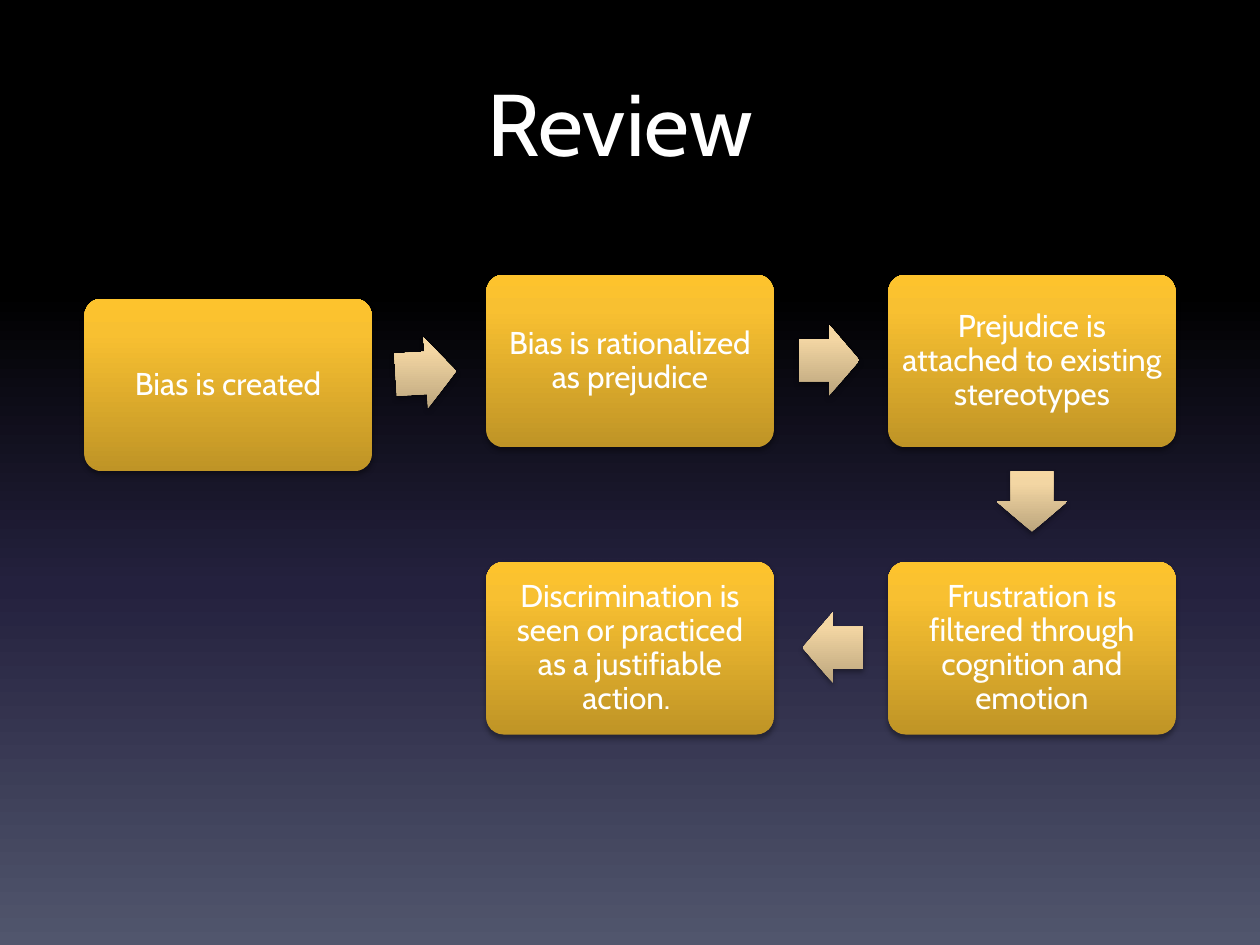
"""Build the Review slide: five bias steps joined by block arrows."""
import pptx
import pptx.dml.color
import pptx.enum.shapes
import pptx.enum.text
import pptx.oxml
import pptx.oxml.ns
import pptx.util

Inches = pptx.util.Inches
Pt = pptx.util.Pt
qn = pptx.oxml.ns.qn
SHAPES = pptx.enum.shapes.MSO_SHAPE

FONT = "Cabin"
COLORS = {
    "text": "FFFFFF",
    "shadow": "000000",
    "night": "000000",
    "indigo": "24213E",
    "slate": "51566D",
    "gold_dark": "BF9426",
    "gold": "F8C031",
    "gold_light": "FDC32D",
    "sand_dark": "BBA57D",
    "sand": "F3D6A3",
    "sand_light": "F6D7A2",
}
BACKGROUND_STOPS = [(0, "night"), (31, "night"), (62, "indigo"), (100, "slate")]
BOX_STOPS = [(0, "gold_dark"), (80, "gold"), (100, "gold_light")]
ARROW_STOPS = [(0, "sand_dark"), (80, "sand"), (100, "sand_light")]

BOX_WIDTH, BOX_HEIGHT = 2.28, 1.37
COLUMNS = [0.67 + 3.19 * column for column in range(3)]
UPPER_ROW, LOWER_ROW = 2.18, 4.46
STEPS = [
    ("Bias is created", COLUMNS[0], 2.37),
    ("Bias is rationalized as prejudice", COLUMNS[1], UPPER_ROW),
    ("Prejudice is attached to existing stereotypes", COLUMNS[2], UPPER_ROW),
    ("Frustration is filtered through cognition and emotion", COLUMNS[2], LOWER_ROW),
    ("Discrimination is seen or practiced as a justifiable action. ", COLUMNS[1], LOWER_ROW),
]
ARROW_WIDTH, ARROW_HEIGHT = 0.48, 0.56
ARROWS = [(3.14, 2.68, 356.5), (6.34, 2.58, 0), (7.95, 3.7, 90), (6.37, 4.86, 180)]


def set_gradient(fill, element, stops, angle):
    """Fill with a linear gradient that stays upright when the shape turns."""
    fill.gradient()
    fill.gradient_angle = angle
    gradient = element.find(".//" + qn("a:gradFill"))
    gradient.set("rotWithShape", "0")
    stop_list = gradient.find(qn("a:gsLst"))
    for stop in list(stop_list):
        stop_list.remove(stop)
    for position, name in stops:
        stop = stop_list.makeelement(qn("a:gs"), {"pos": str(position * 1000)})
        color = stop.makeelement(qn("a:srgbClr"), {"val": COLORS[name]})
        stop.append(color)
        stop_list.append(stop)


def add_shadow(shape):
    """Give the shape a soft shadow below it."""
    shape.shadow.inherit = False
    effects = shape._element.spPr.find(qn("a:effectLst"))
    effects.append(pptx.oxml.parse_xml(
        f'<a:outerShdw {pptx.oxml.ns.nsdecls("a")} blurRad="{Pt(3.1)}" '
        f'dist="{Pt(1.8)}" dir="5400000" rotWithShape="0">'
        f'<a:srgbClr val="{COLORS["shadow"]}"><a:alpha val="35000"/></a:srgbClr>'
        '</a:outerShdw>'))


def add_block(slide, kind, left, top, width, height, stops):
    """Add a borderless shape with a gradient and a shadow."""
    shape = slide.shapes.add_shape(
        kind, Inches(left), Inches(top), Inches(width), Inches(height))
    set_gradient(shape.fill, shape._element, stops, 90)
    shape.line.fill.background()
    add_shadow(shape)
    return shape


def write_text(shape, text, size):
    """Write one centred paragraph and return it."""
    frame = shape.text_frame
    frame.word_wrap = True
    frame.text = text
    paragraph = frame.paragraphs[0]
    paragraph.alignment = pptx.enum.text.PP_ALIGN.CENTER
    font = paragraph.runs[0].font
    font.name = FONT
    font.size = Pt(size)
    font.color.rgb = pptx.dml.color.RGBColor.from_string(COLORS["text"])
    return paragraph


def add_title(slide, text):
    """Add the slide title."""
    title = slide.shapes.add_textbox(Inches(0.5), Inches(0.5), Inches(9), Inches(1.25))
    write_text(title, text, 50)


def add_step(slide, text, left, top):
    """Add one rounded box with its step text."""
    box = add_block(slide, SHAPES.ROUNDED_RECTANGLE, left, top,
                    BOX_WIDTH, BOX_HEIGHT, BOX_STOPS)
    box.adjustments[0] = 0.1
    frame = box.text_frame
    frame.margin_left = frame.margin_right = Inches(0.07)
    frame.margin_top = frame.margin_bottom = Inches(0.07)
    frame.vertical_anchor = pptx.enum.text.MSO_ANCHOR.MIDDLE
    paragraph = write_text(box, text, 18)
    paragraph.line_spacing = 0.9
    paragraph.space_after = Pt(6.3)


def add_arrow(slide, left, top, rotation):
    """Add one block arrow turned towards the next step."""
    arrow = add_block(slide, SHAPES.RIGHT_ARROW, left, top,
                      ARROW_WIDTH, ARROW_HEIGHT, ARROW_STOPS)
    arrow.adjustments[0] = 0.6
    arrow.adjustments[1] = 0.5
    arrow.rotation = rotation


def main():
    """Build and save the slide."""
    presentation = pptx.Presentation()
    presentation.slide_width = Inches(10)
    presentation.slide_height = Inches(7.5)
    slide = presentation.slides.add_slide(presentation.slide_layouts[6])
    set_gradient(slide.background.fill, slide._element, BACKGROUND_STOPS, 270)
    add_title(slide, "Review ")
    for step in STEPS:
        add_step(slide, *step)
    for arrow in ARROWS:
        add_arrow(slide, *arrow)
    presentation.save("out.pptx")


if __name__ == "__main__":
    main()
